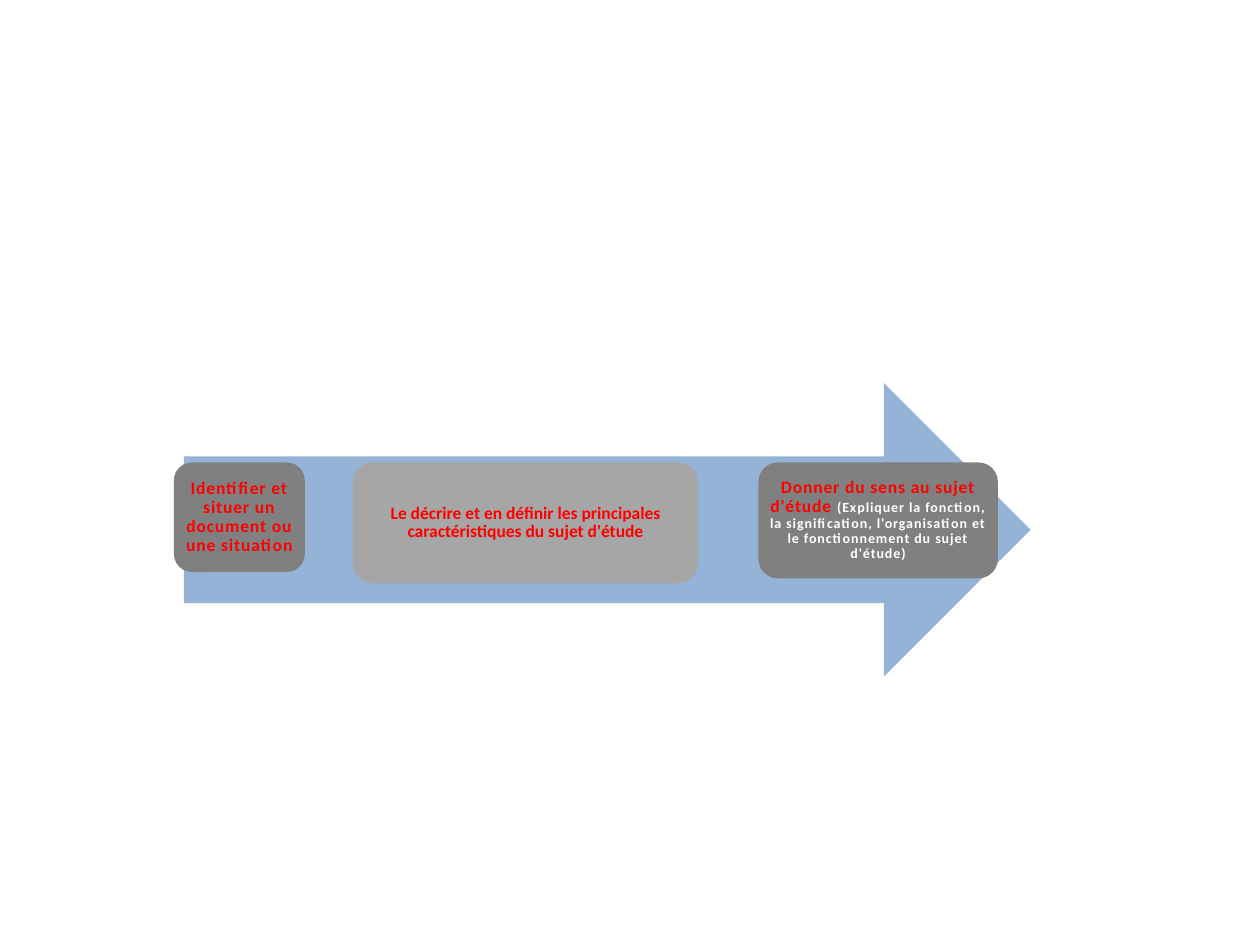
from dataclasses import dataclass

from pptx import Presentation
from pptx import util as u
from pptx.dml.color import RGBColor
from pptx.enum import shapes, text


@dataclass(frozen=True)
class Theme:
    font: str = "Calibri"
    blue: str = "95B3D7"
    dark: str = "808080"
    light: str = "A6A6A6"
    red: str = "FF0000"
    white: str = "FFFFFF"
    main: float = 10
    note: float = 8
    inset: float = 0.04
    leading: float = 0.9


class Board:
    def __init__(self, slide, theme):
        self.slide = slide
        self.theme = theme

    def shape(self, kind, left, top, width, height, fill):
        item = self.slide.shapes.add_shape(
            kind, u.Inches(left), u.Inches(top), u.Inches(width), u.Inches(height))
        item.shadow.inherit = False
        item.fill.solid()
        item.fill.fore_color.rgb = RGBColor.from_string(fill)
        item.line.fill.background()
        return item

    def arrow(self, left, top, width, height):
        return self.shape(shapes.MSO_SHAPE.RIGHT_ARROW, left, top, width, height,
                          self.theme.blue)

    def step(self, left, top, width, height, fill, title, note="", track=0):
        look = self.theme
        card = self.shape(shapes.MSO_SHAPE.ROUNDED_RECTANGLE,
                          left, top, width, height, fill)
        frame = card.text_frame
        frame.word_wrap = True
        frame.vertical_anchor = text.MSO_ANCHOR.MIDDLE
        frame.margin_left = frame.margin_right = u.Inches(look.inset)
        frame.margin_top = frame.margin_bottom = u.Inches(look.inset)
        line = frame.paragraphs[0]
        line.alignment = text.PP_ALIGN.CENTER
        line.line_spacing = look.leading
        self.run(line, title, look.main, look.red, track)
        if note:
            self.run(line, note, look.note, look.white, track)

    def run(self, line, words, size, color, track):
        part = line.add_run()
        part.text = words
        part.font.name = self.theme.font
        part.font.size = u.Pt(size)
        part.font.bold = True
        part.font.color.rgb = RGBColor.from_string(color)
        if track:
            part.font._element.set("spc", str(int(track * 100)))


def main():
    deck = Presentation()
    deck.slide_width = u.Inches(10)
    deck.slide_height = u.Inches(7.5)
    look = Theme()
    board = Board(deck.slides.add_slide(deck.slide_layouts[6]), look)

    board.arrow(1.46, 3.04, 6.72, 2.33)
    top = 3.67
    board.step(1.38, top, 1.04, 0.87, look.dark,
               "Identifier et situer un document ou une situation", track=0.5)
    board.step(2.8, top, 2.74, 0.96, look.light,
               "Le décrire et en définir les principales caractéristiques du sujet d'étude")
    board.step(6.02, top, 1.9, 0.92, look.dark,
               "Donner du sens au sujet d'étude ",
               "(Expliquer la fonction, la signification, l'organisation et "
               "le fonctionnement du sujet d'étude)", track=0.5)
    deck.save("out.pptx")


if __name__ == "__main__":
    main()
